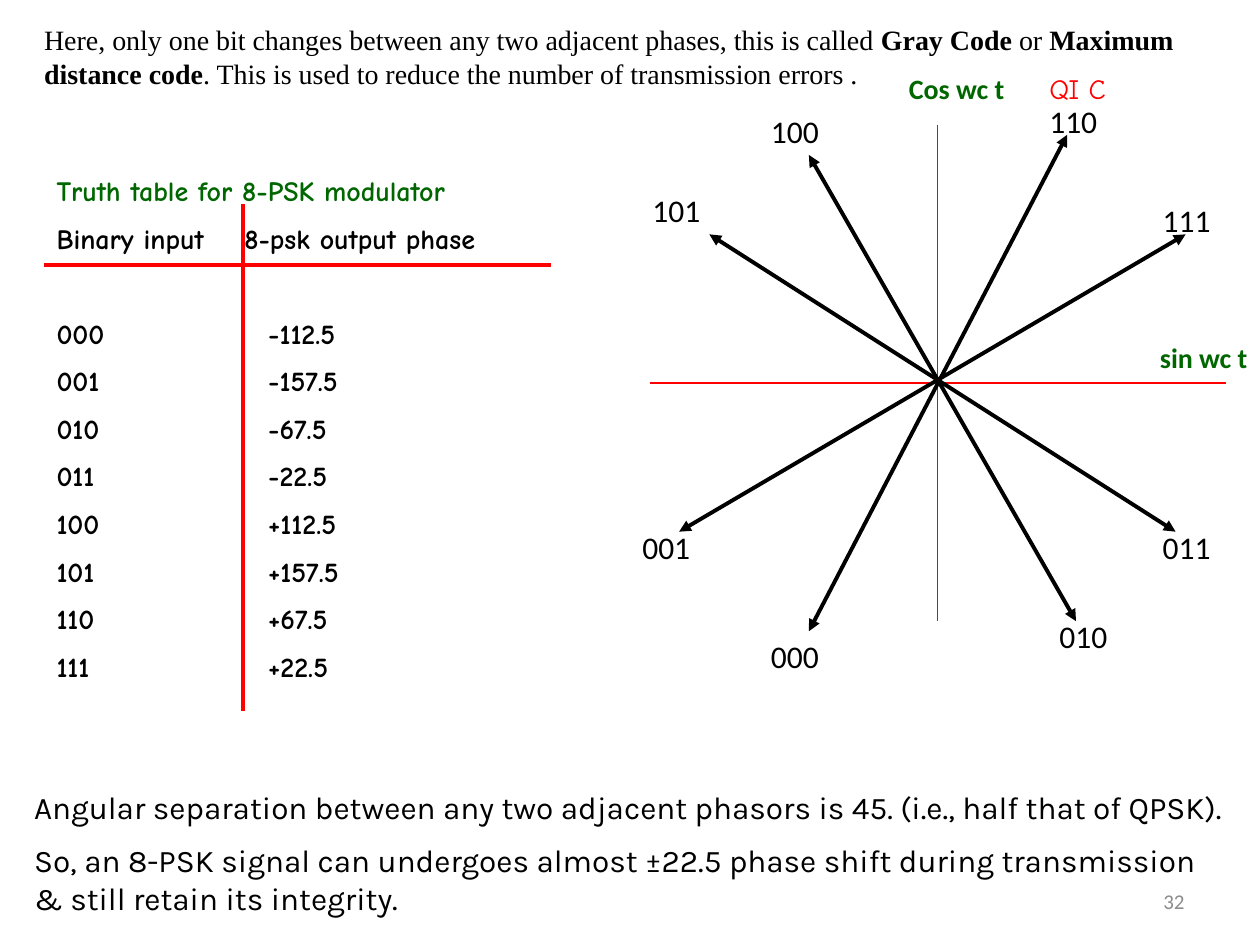
from dataclasses import dataclass
from lxml.etree import SubElement
from pptx import Presentation
from pptx.dml.color import RGBColor
from pptx.enum.shapes import MSO_CONNECTOR
from pptx.enum.text import MSO_ANCHOR, MSO_AUTO_SIZE, PP_ALIGN
from pptx.oxml.ns import qn
from pptx.util import Inches, Pt


@dataclass
class Theme:
    black: str = "000000"
    green: str = "006600"
    red: str = "FF0000"
    grey: str = "8C8C8C"
    sans: str = "Calibri"
    comic: str = "Comic Neue"
    body: str = "Karla"
    serif: str = "Times New Roman"
    large: int = 18
    mid: int = 16
    small: int = 12
    thick: float = 2.25
    thin: float = 0.75


theme = Theme()
deck = Presentation()
deck.slide_width, deck.slide_height = Inches(10), Inches(7.5)
slide = deck.slides.add_slide(deck.slide_layouts[1])
shapes = slide.shapes


def write(box, place, lines, font, size, color, align=PP_ALIGN.LEFT):
    box.left, box.top, box.width, box.height = [Inches(n) for n in place]
    frame = box.text_frame
    frame.word_wrap = True
    frame.auto_size = MSO_AUTO_SIZE.NONE
    frame.vertical_anchor = MSO_ANCHOR.TOP
    for i, line in enumerate(lines):
        para = frame.add_paragraph() if i else frame.paragraphs[0]
        para.alignment = align
        para.space_before = Pt(size / 2)
        for text, bold in line:
            run = para.add_run()
            run.text = text
            run.font.name = font
            run.font.size = Pt(size)
            run.font.bold = bold
            run.font.color.rgb = RGBColor.from_string(color)
    return frame


def draw(start, end, color, width, heads=False):
    ends = [Inches(n) for n in start + end]
    line = shapes.add_connector(MSO_CONNECTOR.STRAIGHT, *ends)
    line.line.color.rgb = RGBColor.from_string(color)
    line.line.width = Pt(width)
    if heads:
        for tag in ("a:headEnd", "a:tailEnd"):
            SubElement(line.line._get_or_add_ln(), qn(tag), type="triangle")
    SubElement(line._element.spPr, qn("a:effectLst"))


intro = [
    ("Here, only one bit changes between any two adjacent phases, this is called ", False),
    ("Gray Code", True),
    (" or ", False),
    ("Maximum distance code", True),
    (". This is used to reduce the number of transmission errors .", False),
]
write(shapes.title, (0.25, 0.13, 9.48, 0.64), [intro], theme.serif, theme.mid, theme.black)

notes = [
    "Angular separation between any two adjacent phasors is 45. (i.e., half that of QPSK).",
    "So, an 8-PSK signal can undergoes almost ±22.5 phase shift during transmission & still retain its integrity.",
]
frame = write(slide.placeholders[1], (0.17, 6.2, 9.67, 1.16), [[(note, False)] for note in notes],
              theme.body, theme.large, theme.black)
for para in frame.paragraphs:
    props = para._p.get_or_add_pPr()
    props.set("marL", "0")
    props.set("indent", "0")
    SubElement(props, qn("a:buNone"))

rows = [
    ("Binary input", "8-psk output phase"),
    ("000", "-112.5"),
    ("001", "-157.5"),
    ("010", "-67.5"),
    ("011", "-22.5"),
    ("100", "+112.5"),
    ("101", "+157.5"),
    ("110", "+67.5"),
    ("111", "+22.5"),
]
lines = [[("Truth table for 8-PSK modulator", True)]]
lines += [[("\t".join(row), True)] for row in rows]
frame = write(shapes.add_textbox(0, 0, 0, 0), (0.35, 1.33, 4.09, 4.41), lines,
              theme.comic, theme.mid, theme.black)
paras = frame.paragraphs
paras[0].runs[0].font.color.rgb = RGBColor.from_string(theme.green)
paras[2].space_before = Pt(35)
for i, para in enumerate(paras[1:]):
    tabs = SubElement(para._p.get_or_add_pPr(), qn("a:tabLst"))
    SubElement(tabs, qn("a:tab"), pos=str(Inches(1.68 if i else 1.49)), algn="l")

draw((1.93, 1.62), (1.93, 5.64), theme.red, theme.thick)
draw((0.35, 2.1), (4.37, 2.1), theme.red, theme.thick)
draw((7.44, 0.99), (7.44, 4.93), theme.red, theme.thin)
draw((5.16, 3.04), (9.73, 3.04), theme.red, theme.thin)

rays = [
    ((8.47, 1.07), (6.42, 5.01)),
    ((9.41, 1.86), (5.39, 4.22)),
    ((6.42, 1.23), (8.54, 4.93)),
    ((5.63, 1.86), (9.33, 4.22)),
]
for start, end in rays:
    draw(start, end, theme.black, theme.thick, heads=True)

codes = [
    ("110", 8.23, 0.76),
    ("100", 6.02, 0.84),
    ("101", 5.08, 1.47),
    ("011", 9.13, 4.14),
    ("010", 8.31, 4.85),
    ("000", 6.02, 5.01),
    ("001", 5, 4.14),
    ("111", 9.13, 1.55),
]
for code, left, top in codes:
    write(shapes.add_textbox(0, 0, 0, 0), (left, top, 0.87, 0.4), [[(code, False)]],
          theme.sans, theme.large, theme.black)

for name, left, top in [("Cos wc t", 6.81, 0.52), ("sin wc t", 8.74, 2.65)]:
    write(shapes.add_textbox(0, 0, 0, 0), (left, top, 1.26, 0.37), [[(name, True)]],
          theme.sans, theme.mid, theme.green, PP_ALIGN.RIGHT)

write(shapes.add_textbox(0, 0, 0, 0), (8.23, 0.52, 1.7, 0.37), [[("QI C", False)]],
      theme.comic, theme.mid, theme.red)
frame = write(shapes.add_textbox(0, 0, 0, 0), (7.17, 6.95, 2.33, 0.4), [[("32", False)]],
              theme.sans, theme.small, theme.grey, PP_ALIGN.RIGHT)
frame.vertical_anchor = MSO_ANCHOR.MIDDLE
frame.paragraphs[0].space_before = Pt(0)

deck.save("out.pptx")
